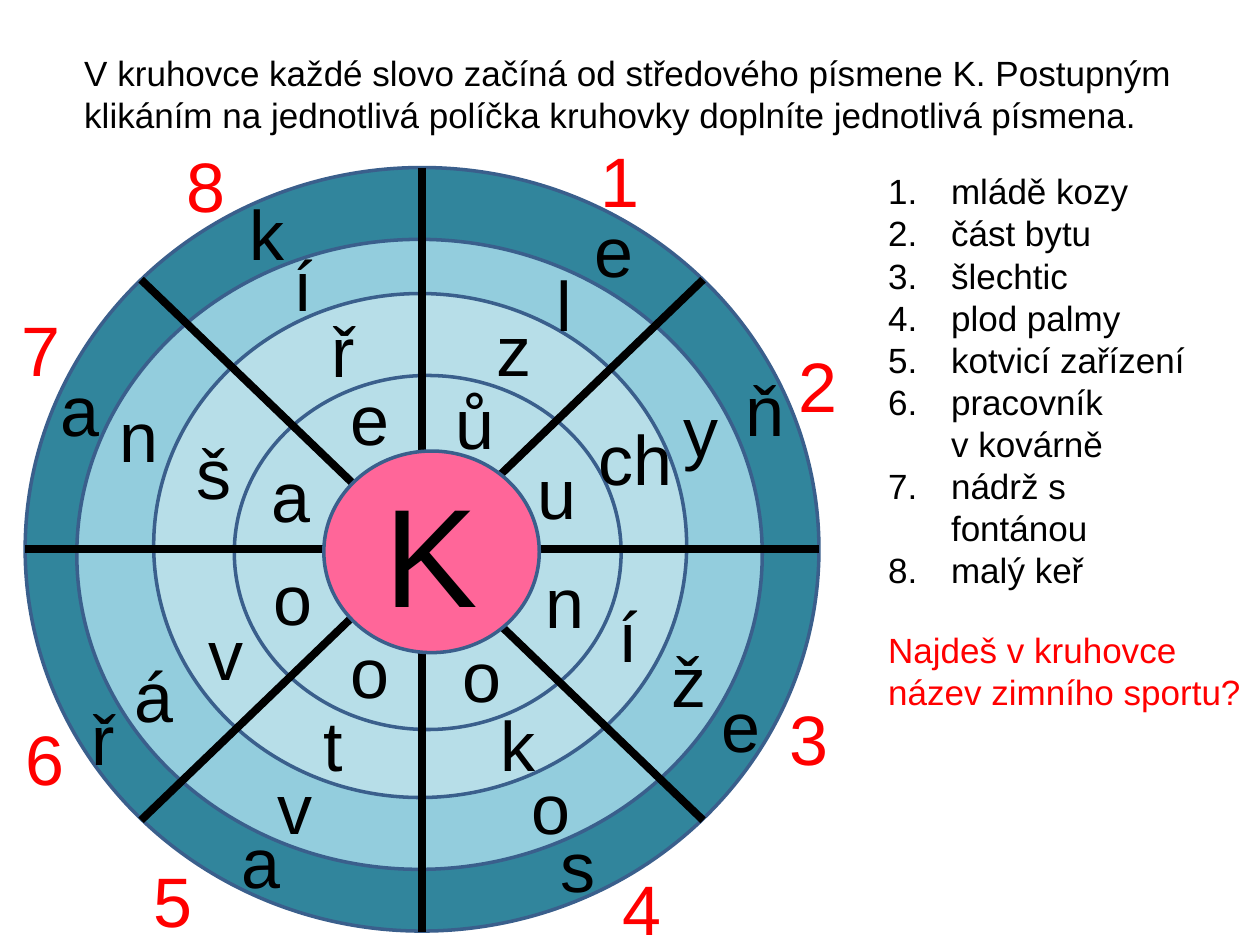
from lxml import etree
from pptx import Presentation
from pptx.dml.color import RGBColor
from pptx.enum.shapes import MSO_CONNECTOR, MSO_SHAPE
from pptx.enum.text import MSO_AUTO_SIZE
from pptx.oxml.ns import qn
from pptx.util import Inches, Pt

CIRCLE = MSO_SHAPE.FLOWCHART_CONNECTOR
STRAIGHT = MSO_CONNECTOR.STRAIGHT
GROW = MSO_AUTO_SIZE.SHAPE_TO_FIT_TEXT
BLACK, RED, OUTLINE = "000000", "FF0000", "3A5F8C"

prs = Presentation()
prs.slide_width, prs.slide_height = Inches(10), Inches(7.5)
s = prs.slides.add_slide(prs.slide_layouts[6])


def rgb(color):
    return RGBColor.from_string(color)


def add_text(text, x, y, w, h=0.77, size=40, color=BLACK, wrap=False, numbered=False):
    """Each line of text is a paragraph; a vertical tab breaks a line within one."""
    tf = s.shapes.add_textbox(Inches(x), Inches(y), Inches(w), Inches(h)).text_frame
    tf.word_wrap = wrap
    tf.auto_size = GROW
    tf.text = text
    for p in tf.paragraphs:
        for r in p.runs:
            r.font.name = "Arial"
            r.font.size = Pt(size)
            r.font.color.rgb = rgb(color)
        if numbered:
            pPr = p._p.get_or_add_pPr()
            pPr.set("marL", str(Inches(0.5)))
            pPr.set("indent", str(Inches(-0.5)))
            etree.SubElement(pPr, qn("a:buFont"), typeface="+mj-lt")
            etree.SubElement(pPr, qn("a:buAutoNum"), type="arabicPeriod")


rings = [
    (0.2, 1.33, 6.3, 6.06, "31859C"),
    (0.61, 1.9, 5.44, 5, "93CDDD"),
    (1.22, 2.33, 4.23, 4, "B7DEE8"),
    (1.86, 2.98, 3.07, 2.81, "B7DEE8"),
]
spokes = [
    (3.35, 1.33, 3.35, 7.4),
    (0.2, 4.36, 6.5, 4.36),
    (1.12, 2.22, 5.58, 6.51),
    (5.58, 2.22, 1.12, 6.51),
]
hub = (2.57, 3.58, 1.71, 1.6, "FF6699")


def add_circle(x, y, w, h, color):
    sp = s.shapes.add_shape(CIRCLE, Inches(x), Inches(y), Inches(w), Inches(h))
    sp.shadow.inherit = False
    sp.fill.solid()
    sp.fill.fore_color.rgb = rgb(color)
    sp.line.color.rgb = rgb(OUTLINE)
    sp.line.width = Pt(2)


for ring in rings:
    add_circle(*ring)
for spoke in spokes:
    line = s.shapes.add_connector(STRAIGHT, *[Inches(v) for v in spoke])
    line.line.color.rgb = rgb(BLACK)
    line.line.width = Pt(4.5)
    etree.SubElement(line._element.spPr, qn("a:effectLst"))
add_circle(*hub)
add_text("K", 2.95, 3.66, 0.95, 1.45, size=80)

# Position of each word's number, then its letters from the hub outwards
words = [
    ((4.67, 1.04), [("ů", 3.52, 2.96), ("z", 3.84, 2.38), ("l", 4.32, 2.03), ("e", 4.62, 1.6)]),
    ((6.24, 2.67), [("u", 4.17, 3.52), ("ch", 4.65, 3.25), ("y", 5.33, 3.03), ("ň", 5.82, 2.86)]),
    ((6.17, 5.47), [("n", 4.23, 4.38), ("í", 4.81, 4.65), ("ž", 5.23, 5.01), ("e", 5.63, 5.37)]),
    ((4.84, 6.82), [("o", 3.57, 4.97), ("k", 3.87, 5.52), ("o", 4.12, 6.02), ("s", 4.35, 6.48)]),
    ((1.12, 6.76), [("o", 2.68, 4.94), ("t", 2.47, 5.52), ("v", 2.1, 6.02), ("a", 1.82, 6.45)]),
    ((0.1, 5.63), [("o", 2.07, 4.36), ("v", 1.56, 4.8), ("á", 0.97, 5.13), ("ř", 0.63, 5.47)]),
    ((0.07, 2.38), [("a", 2.06, 3.54), ("š", 1.46, 3.36), ("n", 0.85, 3.07), ("a", 0.38, 2.86)]),
    ((1.38, 1.08), [("e", 2.68, 2.93), ("ř", 2.53, 2.39), ("í", 2.23, 1.87), ("k", 1.88, 1.46)]),
]
widths = {"ch": 0.8, "l": 0.33, "í": 0.36, "t": 0.36, "ř": 0.39}
widths.update(dict.fromkeys("zyksvšž", 0.48))
for number, ((x, y), letters) in enumerate(words, 1):
    add_text(str(number), x, y, 0.51, color=RED)
    for letter, x, y in letters:
        add_text(letter, x, y, widths.get(letter, 0.51))

add_text(
    "V kruhovce každé slovo začíná od středového písmene K. Postupným\n"
    "klikáním na jednotlivá políčka kruhovky doplníte jednotlivá písmena.",
    0.57, 0.36, 8.92, size=20, wrap=True,
)
clues = [
    "mládě kozy", "část bytu", "šlechtic", "plod palmy", "kotvicí zařízení",
    "pracovník\vv kovárně", "nádrž s fontánou", "malý keř",
]
add_text("\n".join(clues), 6.95, 1.3, 2.76, 3.47, size=20, wrap=True, numbered=True)
add_text("Najdeš v kruhovce\nnázev zimního sportu?", 6.95, 4.94, 3.05,
         size=20, color=RED, wrap=True)

prs.save("out.pptx")
